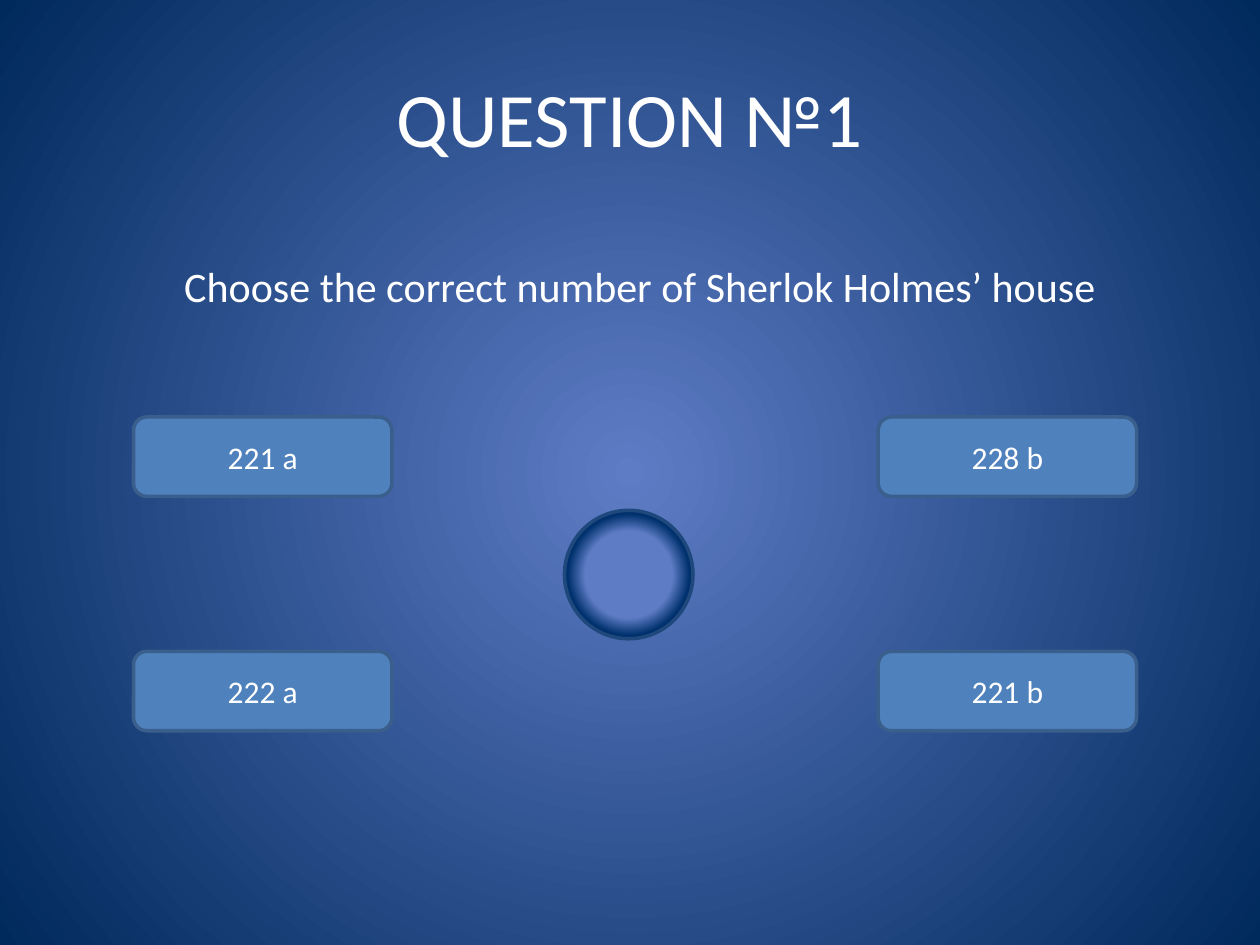
from pptx import Presentation
from pptx.dml.color import RGBColor
from pptx.enum.shapes import MSO_SHAPE as SHAPE
from pptx.enum.text import MSO_ANCHOR as ANCHOR, PP_ALIGN as ALIGN
from pptx.oxml import parse_xml
from pptx.oxml.ns import nsdecls, qn
from pptx.util import Inches, Pt

FONT = "Calibri"
WHITE = RGBColor(0xFF, 0xFF, 0xFF)
GLOW = RGBColor(0x5E, 0x7C, 0xC5)
NIGHT = RGBColor(0x00, 0x29, 0x5C)
RIM = RGBColor(0x00, 0x31, 0x6D)
RIM_LINE = RGBColor(0x1F, 0x49, 0x7D)
BUTTON = RGBColor(0x4F, 0x81, 0xBD)
BUTTON_LINE = RGBColor(0x3A, 0x5F, 0x8C)

ANSWERS = [["221 a", "228 b"], ["222 a", "221 b"]]
COLUMNS = [1.06, 6.97]
ROWS = [3.31, 5.17]


def write(shape, text, size, anchor=ANCHOR.MIDDLE):
    tf = shape.text_frame
    tf.word_wrap = True
    tf.vertical_anchor = anchor
    p = tf.paragraphs[0]
    p.alignment = ALIGN.CENTER
    r = p.add_run()
    r.text = text
    r.font.name = FONT
    r.font.size = Pt(size)
    r.font.color.rgb = WHITE


def fill_radial(fill, parent, stops):
    """Give fill, held by the XML element parent, a gradient from the centre out."""
    fill.gradient()
    for stop, (position, color) in zip(fill.gradient_stops, stops):
        stop.position = position
        stop.color.rgb = color
    grad = parent.find(".//" + qn("a:gradFill"))
    grad.replace(grad.find(qn("a:lin")), parse_xml(
        f'<a:path {nsdecls("a")} path="circle">'
        '<a:fillToRect l="50000" t="50000" r="50000" b="50000"/></a:path>'))


def add_text(s, text, x, y, w, h, size, anchor):
    box = s.shapes.add_textbox(Inches(x), Inches(y), Inches(w), Inches(h))
    write(box, text, size, anchor)


def add_outlined(s, kind, x, y, w, h, line_color):
    sp = s.shapes.add_shape(kind, Inches(x), Inches(y), Inches(w), Inches(h))
    sp.shadow.inherit = False
    sp.line.color.rgb = line_color
    sp.line.width = Pt(2)
    return sp


def add_answer(s, text, x, y):
    sp = add_outlined(s, SHAPE.ROUNDED_RECTANGLE, x, y, 2.05, 0.63, BUTTON_LINE)
    sp.fill.solid()
    sp.fill.fore_color.rgb = BUTTON
    write(sp, text, 18)


def add_orb(s):
    sp = add_outlined(s, SHAPE.OVAL, 4.48, 4.05, 1.02, 1.02, RIM_LINE)
    fill_radial(sp.fill, sp.element.spPr, [(0.48, GLOW), (0.67, RIM)])


def main():
    prs = Presentation()
    prs.slide_width, prs.slide_height = Inches(10), Inches(7.5)
    s = prs.slides.add_slide(prs.slide_layouts[6])
    fill_radial(s.background.fill, s.element, [(0, GLOW), (1, NIGHT)])

    add_text(s, "QUESTION №1", 0.5, 0.3, 9, 1.25, 44, ANCHOR.MIDDLE)
    add_text(s, "Choose the correct number of Sherlok Holmes’ house",
             0.75, 2.02, 8.66, 0.5, 24, ANCHOR.TOP)
    for y, answers in zip(ROWS, ANSWERS):
        for x, answer in zip(COLUMNS, answers):
            add_answer(s, answer, x, y)
    add_orb(s)

    prs.save("out.pptx")


if __name__ == "__main__":
    main()
